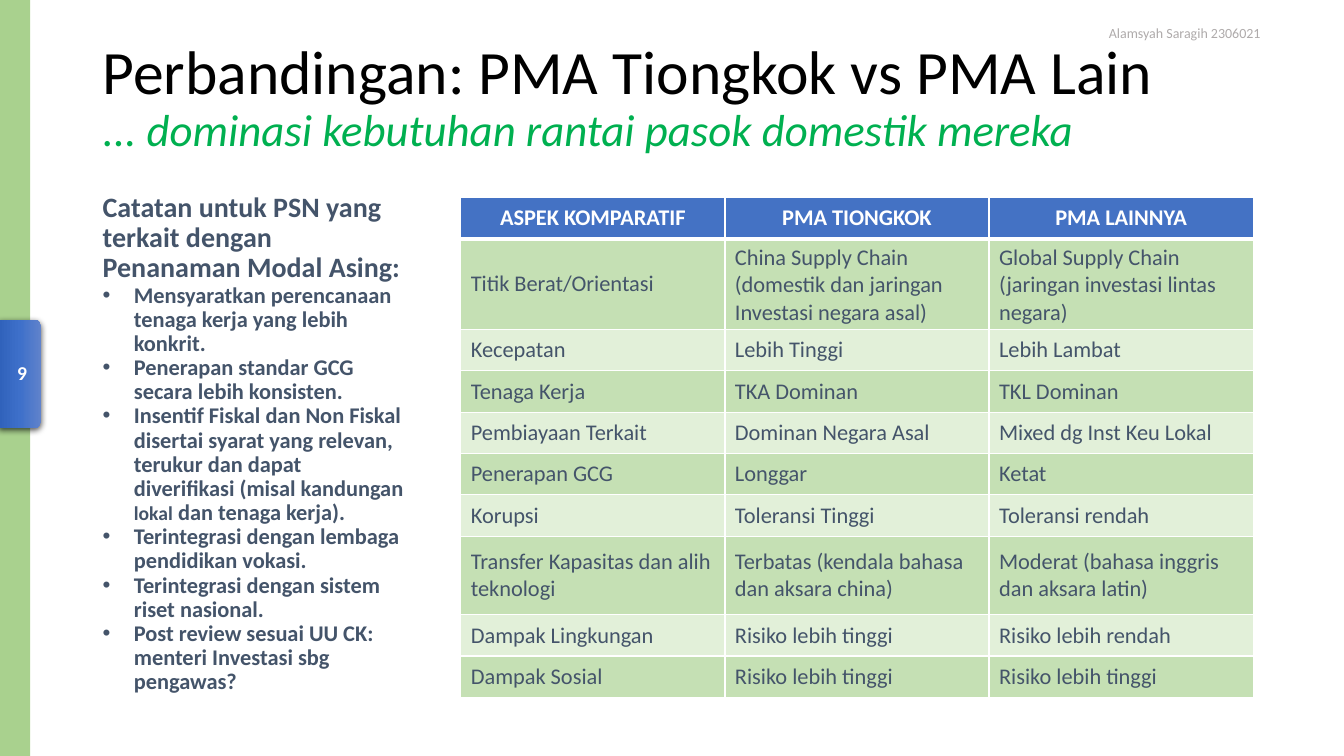
"""Builds the slide comparing Chinese and other foreign direct investment."""
from lxml import etree
from pptx import Presentation
from pptx.dml.color import RGBColor
from pptx.enum.shapes import MSO_SHAPE
from pptx.enum.text import MSO_ANCHOR, PP_ALIGN
from pptx.oxml import parse_xml
from pptx.oxml.ns import nsdecls, qn
from pptx.util import Inches, Pt

RECT, TAB = MSO_SHAPE.RECTANGLE, MSO_SHAPE.ROUND_2_SAME_RECTANGLE
MIDDLE, BOTTOM = MSO_ANCHOR.MIDDLE, MSO_ANCHOR.BOTTOM
CENTER, RIGHT = PP_ALIGN.CENTER, PP_ALIGN.RIGHT
SLATE, WHITE = "44546A", "FFFFFF"


def style(font, size, color, bold=False, italic=False):
    font.name, font.size, font.bold, font.italic = "Calibri", Pt(size), bold, italic
    font.color.rgb = RGBColor.from_string(color)


def add_text(s, x, y, w, h, anchor=None, wrap=True):
    tf = s.shapes.add_textbox(Inches(x), Inches(y), Inches(w), Inches(h)).text_frame
    tf.word_wrap = wrap
    if anchor is not None:
        tf.vertical_anchor = anchor
    return tf


prs = Presentation()
prs.slide_width, prs.slide_height = Inches(13.33), Inches(7.5)
s = prs.slides.add_slide(prs.slide_layouts[6])

p = add_text(s, 10.86, 0.19, 1.74, 0.27, wrap=False).paragraphs[0]
p.text, p.alignment = "Alamsyah Saragih 2306021", RIGHT
style(p.font, 10, "AFABAB")

band = s.shapes.add_shape(RECT, 0, 0, Inches(0.3), Inches(7.5))
band.shadow.inherit = False
band.fill.solid()
band.fill.fore_color.rgb = RGBColor.from_string("A9D18E")
band.line.fill.background()

tab = s.shapes.add_shape(TAB, Inches(-0.34), Inches(3.5), Inches(1.08), Inches(0.42))
tab.rotation = 90
tab.line.fill.background()
stops = "".join(
    f'<a:gs pos="{pos}"><a:srgbClr val="{color}"/></a:gs>'
    for pos, color in [(0, "6183CB"), (50000, "3E70CA"), (100000, "3062BB")]
)
tab_pr = tab.element.spPr
tab_pr.find(qn("a:prstGeom")).addnext(parse_xml(
    f'<a:gradFill {nsdecls("a")} rotWithShape="1"><a:gsLst>{stops}</a:gsLst>'
    '<a:lin ang="5400000" scaled="0"/></a:gradFill>'
))
tab_pr.append(parse_xml(
    f'<a:effectLst {nsdecls("a")}><a:outerShdw blurRad="{Pt(4.5)}" dist="{Pt(1.5)}" '
    'dir="5400000" algn="ctr" rotWithShape="0"><a:srgbClr val="000000">'
    '<a:alpha val="63000"/></a:srgbClr></a:outerShdw></a:effectLst>'
))

p = add_text(s, 0, 3.5, 0.44, 0.4, MIDDLE).paragraphs[0]
p.text, p.alignment = "9", CENTER
style(p.font, 14, WHITE, bold=True)

p = add_text(s, 0.92, 0.4, 11.5, 1.15, MIDDLE).paragraphs[0]
p.line_spacing = 0.9
r = p.add_run()
r.text = "Perbandingan: PMA Tiongkok vs PMA Lain"
style(r.font, 44, "000000")
p.add_line_break()
r = p.add_run()
r.text = "... dominasi kebutuhan rantai pasok domestik mereka"
style(r.font, 32, "00B050", italic=True)

rows = [
    ("ASPEK KOMPARATIF", "PMA TIONGKOK", "PMA LAINNYA"),
    ("Titik Berat/Orientasi",
     "China Supply Chain (domestik dan jaringan Investasi negara asal)",
     "Global Supply Chain (jaringan investasi lintas negara)"),
    ("Kecepatan", "Lebih Tinggi", "Lebih Lambat"),
    ("Tenaga Kerja", "TKA Dominan", "TKL Dominan"),
    ("Pembiayaan Terkait", "Dominan Negara Asal", "Mixed dg Inst Keu Lokal"),
    ("Penerapan GCG", "Longgar", "Ketat"),
    ("Korupsi", "Toleransi Tinggi", "Toleransi rendah"),
    ("Transfer Kapasitas dan alih teknologi",
     "Terbatas (kendala bahasa dan aksara china)",
     "Moderat (bahasa inggris dan aksara latin)"),
    ("Dampak Lingkungan", "Risiko lebih tinggi", "Risiko lebih rendah"),
    ("Dampak Sosial", "Risiko lebih tinggi", "Risiko lebih tinggi"),
]
tall_rows = (1, 7)
table = s.shapes.add_table(
    len(rows), 3, Inches(4.57), Inches(1.96), Inches(7.85), Inches(4.84)
).table
for column in table.columns:
    column.width = Inches(2.62)
for i, texts in enumerate(rows):
    header = i == 0
    table.rows[i].height = Inches(0.78 if i in tall_rows else 0.41)
    fill = "4472C4" if header else "C5E0B4" if i % 2 else "E2F0D9"
    for j, text in enumerate(texts):
        cell = table.cell(i, j)
        cell.vertical_anchor = MIDDLE
        p = cell.text_frame.paragraphs[0]
        p.text = text
        style(p.font, 16, WHITE if header else SLATE, bold=header)
        if header:
            p.alignment = CENTER
        tc_pr = cell._tc.get_or_add_tcPr()
        for side in "LRTB":
            thick = (header and side == "B") or (i == 1 and side == "T")
            ln = etree.SubElement(tc_pr, qn(f"a:ln{side}"), w=str(Pt(3 if thick else 1)))
            solid = etree.SubElement(ln, qn("a:solidFill"))
            etree.SubElement(solid, qn("a:srgbClr"), val=WHITE)
        cell.fill.solid()
        cell.fill.fore_color.rgb = RGBColor.from_string(fill)

tf = add_text(s, 0.92, 1.96, 3.2, 4.98, BOTTOM)
p = tf.paragraphs[0]
p.text = "Catatan untuk PSN yang terkait dengan Penanaman Modal Asing:"
p.line_spacing = 0.9
style(p.font, 20, SLATE, bold=True)

notes = [
    ["Mensyaratkan perencanaan tenaga kerja yang lebih konkrit."],
    ["Penerapan standar GCG secara lebih konsisten."],
    ["Insentif Fiskal dan Non Fiskal disertai syarat yang relevan, terukur dan dapat "
     "diverifikasi (misal kandungan ", "lokal", " dan tenaga kerja)."],
    ["Terintegrasi dengan lembaga pendidikan vokasi."],
    ["Terintegrasi dengan sistem riset nasional."],
    ["Post review sesuai UU CK: menteri Investasi sbg pengawas?"],
]
for note in notes:
    p = tf.add_paragraph()
    p.line_spacing = 0.9
    for text in note:
        r = p.add_run()
        r.text = text
        style(r.font, 14 if text == "lokal" else 16, SLATE, bold=True)
    p_pr = p._p.get_or_add_pPr()
    p_pr.set("marL", str(Inches(0.31)))
    p_pr.set("indent", str(Inches(-0.31)))
    etree.SubElement(p_pr, qn("a:buFont"), typeface="Arial")
    etree.SubElement(p_pr, qn("a:buChar"), char="•")

prs.save("out.pptx")
